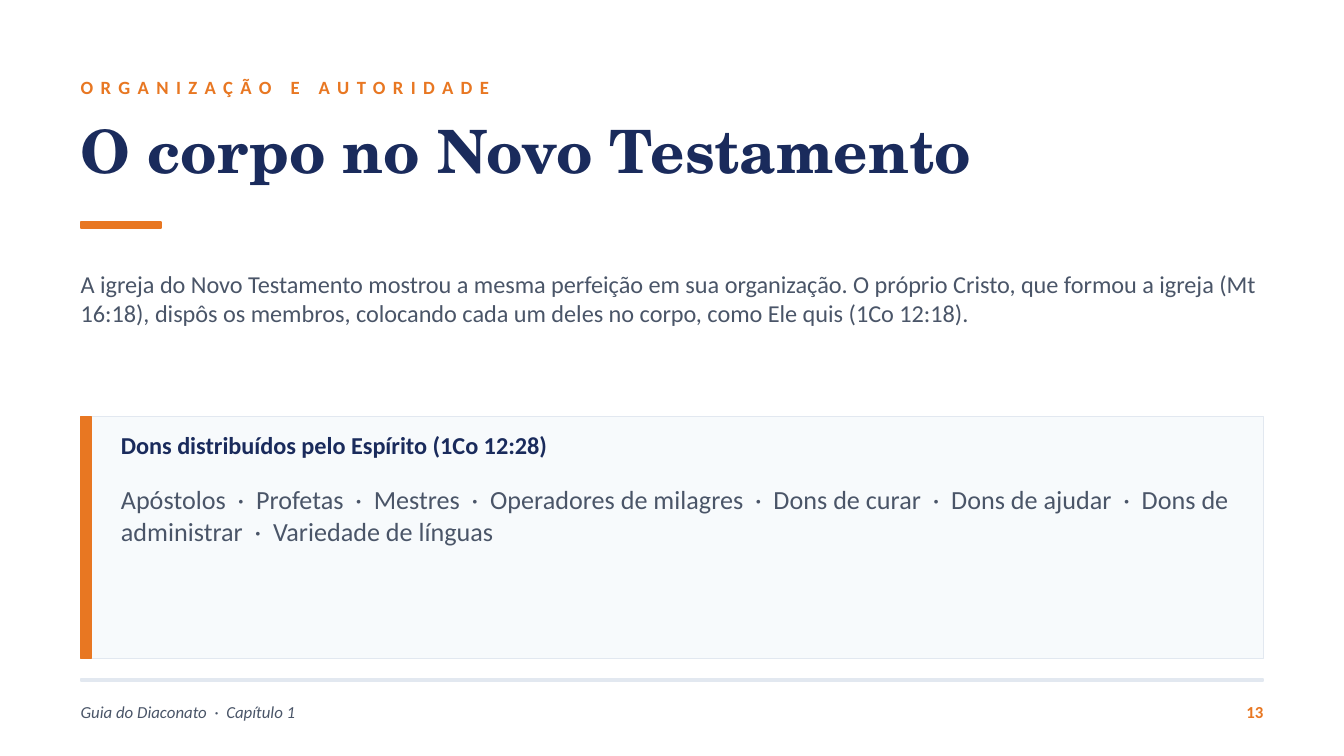
from pptx import Presentation
from pptx.dml.color import RGBColor
from pptx.enum.shapes import MSO_SHAPE
from pptx.enum.text import MSO_ANCHOR, PP_ALIGN
from pptx.util import Inches, Pt

# Content
TOPIC = "ORGANIZAÇÃO E AUTORIDADE"
TITLE = "O corpo no Novo Testamento"
INTRO = (
    "A igreja do Novo Testamento mostrou a mesma perfeição em sua organização. "
    "O próprio Cristo, que formou a igreja (Mt 16:18), dispôs os membros, "
    "colocando cada um deles no corpo, como Ele quis (1Co 12:18)."
)
HEAD = "Dons distribuídos pelo Espírito (1Co 12:28)"
GIFTS = [
    "Apóstolos", "Profetas", "Mestres", "Operadores de milagres",
    "Dons de curar", "Dons de ajudar", "Dons de administrar",
    "Variedade de línguas",
]
FOOTER = ["Guia do Diaconato", "Capítulo 1"]
NUMBER = "13"
DOT = "  ·  "

# Style
NAVY = RGBColor(0x1A, 0x2B, 0x5C)
ORANGE = RGBColor(0xE8, 0x77, 0x22)
GRAY = RGBColor(0x4A, 0x55, 0x68)
PALE = RGBColor(0xF7, 0xFA, 0xFC)
RULE = RGBColor(0xE2, 0xE8, 0xF0)
SANS, SERIF = "Calibri", "TeX Gyre Schola"

# Layout, in inches (16:9)
WIDTH = 10
HEIGHT = WIDTH * 9 / 16
LEFT = 0.6
SPAN = WIDTH - 2 * LEFT
CARD_TOP, CARD_H = 3.1, 1.8
INNER, INNER_W = LEFT + 0.3, SPAN - 0.5
FOOT_TOP = 5.15

deck = Presentation()
deck.slide_width, deck.slide_height = Inches(WIDTH), Inches(HEIGHT)
slide = deck.slides.add_slide(deck.slide_layouts[6])


def add_text(text, x, y, w, h, size, color, font=SANS, bold=False,
             italic=False, middle=False, align=PP_ALIGN.LEFT, spacing=None):
    box = slide.shapes.add_textbox(Inches(x), Inches(y), Inches(w), Inches(h))
    frame = box.text_frame
    frame.word_wrap = True
    frame.margin_left = frame.margin_right = 0
    frame.margin_top = frame.margin_bottom = 0
    frame.vertical_anchor = MSO_ANCHOR.MIDDLE if middle else MSO_ANCHOR.TOP
    para = frame.paragraphs[0]
    para.alignment = align
    run = para.add_run()
    run.text = text
    style = run.font
    style.name, style.size, style.color.rgb = font, Pt(size), color
    style.bold, style.italic = bold, italic
    if spacing:
        run._r.get_or_add_rPr().set("spc", str(spacing * 100))


def add_bar(x, y, w, h, fill, line=None, weight=1):
    bar = slide.shapes.add_shape(
        MSO_SHAPE.RECTANGLE, Inches(x), Inches(y), Inches(w), Inches(h))
    bar.shadow.inherit = False
    bar.fill.solid()
    bar.fill.fore_color.rgb = fill
    bar.line.color.rgb = line or fill
    bar.line.width = Pt(weight)


# Heading
add_text(TOPIC, LEFT, 0.5, 6, 0.3, 10, ORANGE, bold=True, middle=True, spacing=4)
add_text(TITLE, LEFT, 0.85, 9, 0.7, 32, NAVY, font=SERIF, bold=True)
add_bar(LEFT, 1.65, 0.6, 0.05, ORANGE)
add_text(INTRO, LEFT, 2, 9, 1, 13, GRAY)

# Card of gifts
add_bar(LEFT, CARD_TOP, SPAN, CARD_H, PALE, line=RULE, weight=0.5)
add_bar(LEFT, CARD_TOP, 0.08, CARD_H, ORANGE)
add_text(HEAD, INNER, CARD_TOP + 0.1, INNER_W, 0.35, 13, NAVY, bold=True)
add_text(DOT.join(GIFTS), INNER, CARD_TOP + 0.5, INNER_W, 1.2, 14, GRAY)

# Footer
add_bar(LEFT, FOOT_TOP - 0.1, SPAN, 0.02, RULE)
add_text(DOT.join(FOOTER), LEFT, FOOT_TOP, 6, 0.3, 9, GRAY, italic=True, middle=True)
add_text(NUMBER, LEFT + SPAN - 0.5, FOOT_TOP, 0.5, 0.3, 9, ORANGE, bold=True,
         middle=True, align=PP_ALIGN.RIGHT)

deck.save("out.pptx")
